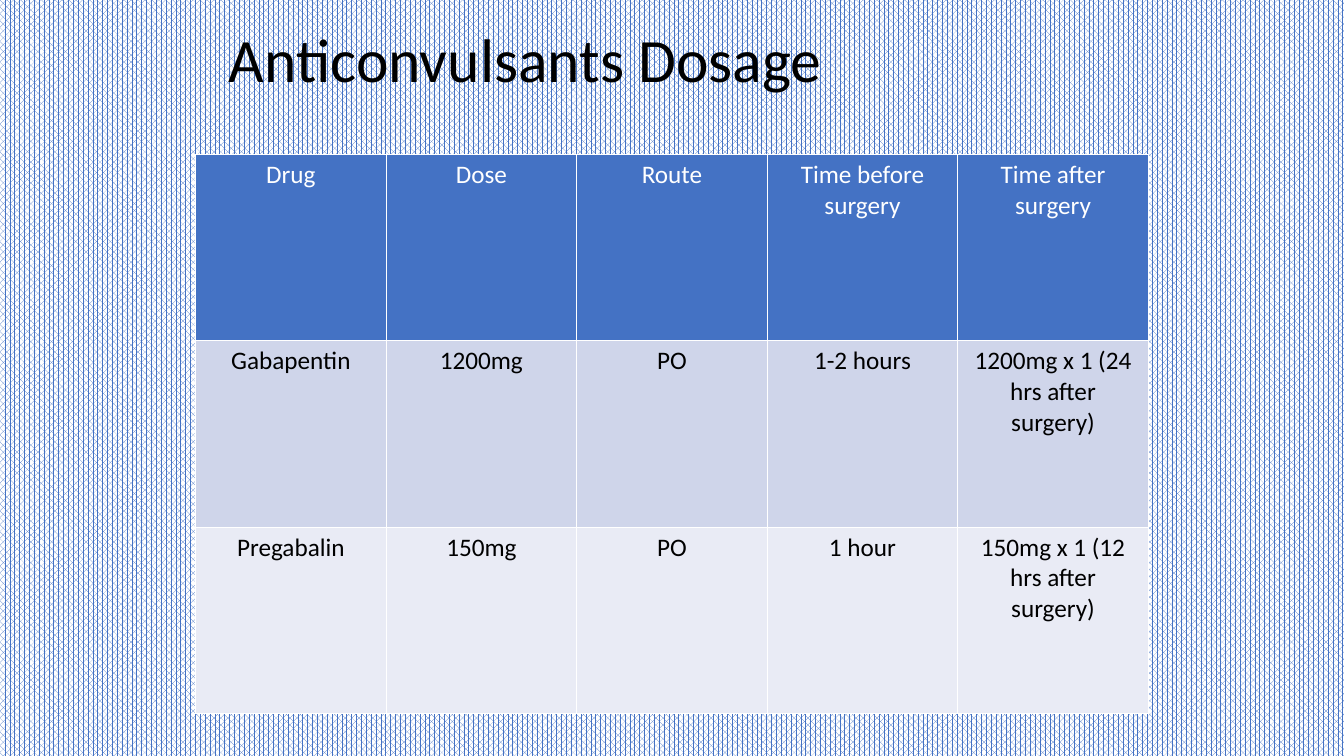
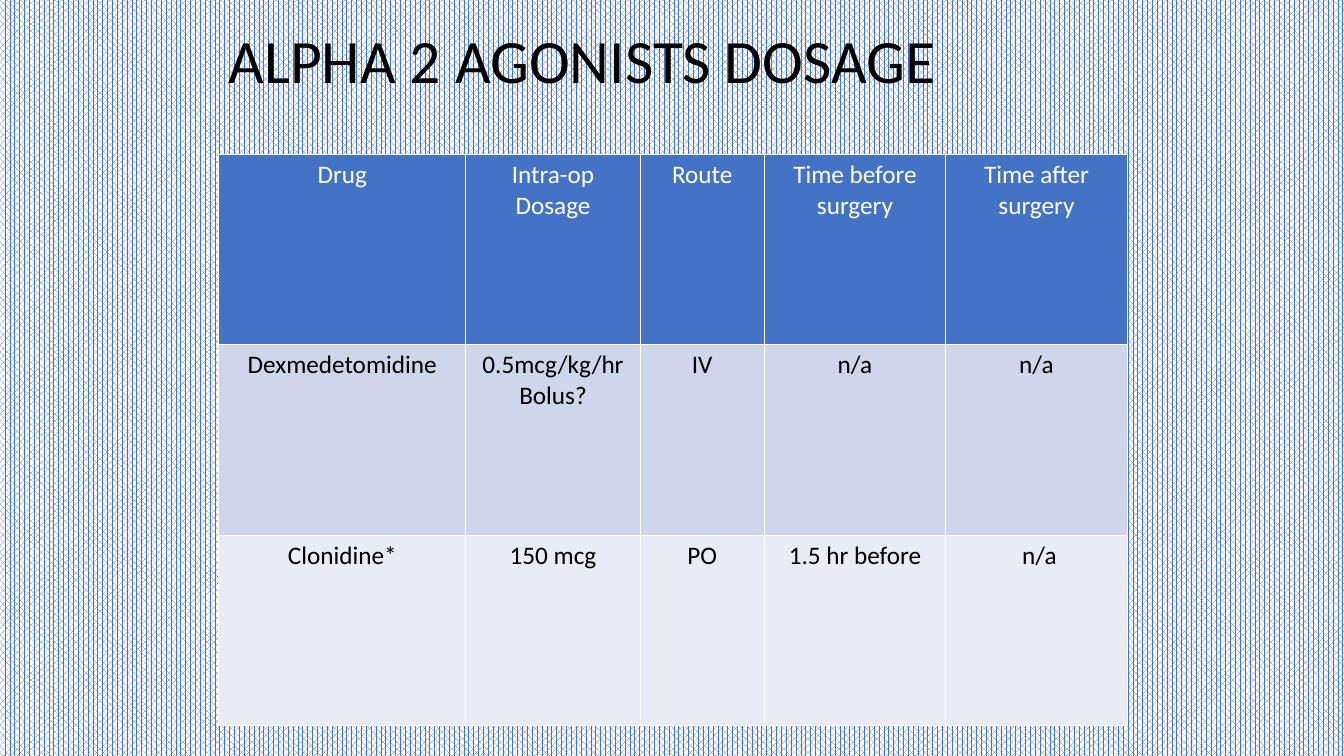
from lxml import etree
from pptx import Presentation
from pptx.dml.color import RGBColor
from pptx.enum.dml import MSO_PATTERN
from pptx.enum.text import MSO_ANCHOR, PP_ALIGN
from pptx.oxml.ns import qn
from pptx.util import Inches, Pt

# Shared look
FONT = "Calibri"
BLUE, WHITE, BLACK = "4472C4", "FFFFFF", "000000"
ROW_FILLS = [BLUE, "CFD5EA", "E9EBF5"]
ROW_COLORS = [WHITE, BLACK, BLACK]
PATTERN = MSO_PATTERN.PERCENT_70
LEFT, CENTER = PP_ALIGN.LEFT, PP_ALIGN.CENTER
MIDDLE = MSO_ANCHOR.MIDDLE
TABLE_TOP = 1.53

# Content of each slide; a line break in a cell starts a new paragraph
dosages = [
    {
        "title": "Anticonvulsants Dosage",
        "title_top": 0,
        "left": 1.94,
        "widths": [1.89] * 5,
        "row_height": 1.85,
        "rows": [
            ["Drug", "Dose", "Route", "Time before surgery", "Time after surgery"],
            ["Gabapentin", "1200mg", "PO", "1-2 hours", "1200mg x 1 (24 hrs after surgery)"],
            ["Pregabalin", "150mg", "PO", "1 hour", "150mg x 1 (12 hrs after surgery)"],
        ],
    },
    {
        "title": "ALPHA 2 AGONISTS DOSAGE",
        "title_top": 0.01,
        "left": 2.17,
        "widths": [2.45, 1.73, 1.23, 1.8, 1.8],
        "row_height": 1.89,
        "rows": [
            ["Drug", "Intra-op\nDosage", "Route", "Time before surgery", "Time after surgery"],
            ["Dexmedetomidine", "0.5mcg/kg/hr\nBolus?", "IV", "n/a", "n/a"],
            ["Clonidine*", "150 mcg", "PO", "1.5 hr before", " n/a"],
        ],
    },
]


def rgb(value):
    return RGBColor.from_string(value)


def write(frame, text, size=18, color=BLACK, align=LEFT, spacing=1.0):
    frame.word_wrap = True
    frame.text = text
    for paragraph in frame.paragraphs:
        paragraph.alignment = align
        paragraph.line_spacing = spacing
        font = paragraph.runs[0].font
        font.name = FONT
        font.size = Pt(size)
        font.color.rgb = rgb(color)


prs = Presentation()
prs.slide_width = Inches(13.33)
prs.slide_height = Inches(7.5)
blank = prs.slide_layouts[6]

for dosage in dosages:
    slide = prs.slides.add_slide(blank)

    # Patterned background
    backdrop = slide.background.fill
    backdrop.patterned()
    backdrop.pattern = PATTERN
    backdrop.fore_color.rgb = rgb(BLUE)
    backdrop.back_color.rgb = rgb(WHITE)

    # Title
    title = slide.shapes.add_textbox(
        Inches(2.17), Inches(dosage["title_top"]), Inches(9), Inches(1.25)
    ).text_frame
    write(title, dosage["title"], size=44, spacing=0.9)
    title.vertical_anchor = MIDDLE

    # Dosage table
    rows, widths, row_height = dosage["rows"], dosage["widths"], dosage["row_height"]
    table = slide.shapes.add_table(
        len(rows), len(widths), Inches(dosage["left"]), Inches(TABLE_TOP),
        Inches(sum(widths)), Inches(row_height * len(rows)),
    ).table
    for column, width in zip(table.columns, widths):
        column.width = Inches(width)
    for row, drug, fill, color in zip(table.rows, rows, ROW_FILLS, ROW_COLORS):
        row.height = Inches(row_height)
        for cell, text in zip(row.cells, drug):
            write(cell.text_frame, text, color=color, align=CENTER)

            # White cell borders, which come before the fill in the XML
            properties = cell._tc.get_or_add_tcPr()
            for side in ("a:lnL", "a:lnR", "a:lnT", "a:lnB"):
                line = etree.SubElement(properties, qn(side), w=str(Pt(1)))
                solid = etree.SubElement(line, qn("a:solidFill"))
                etree.SubElement(solid, qn("a:srgbClr"), val=WHITE)
            cell.fill.solid()
            cell.fill.fore_color.rgb = rgb(fill)

prs.save("out.pptx")
